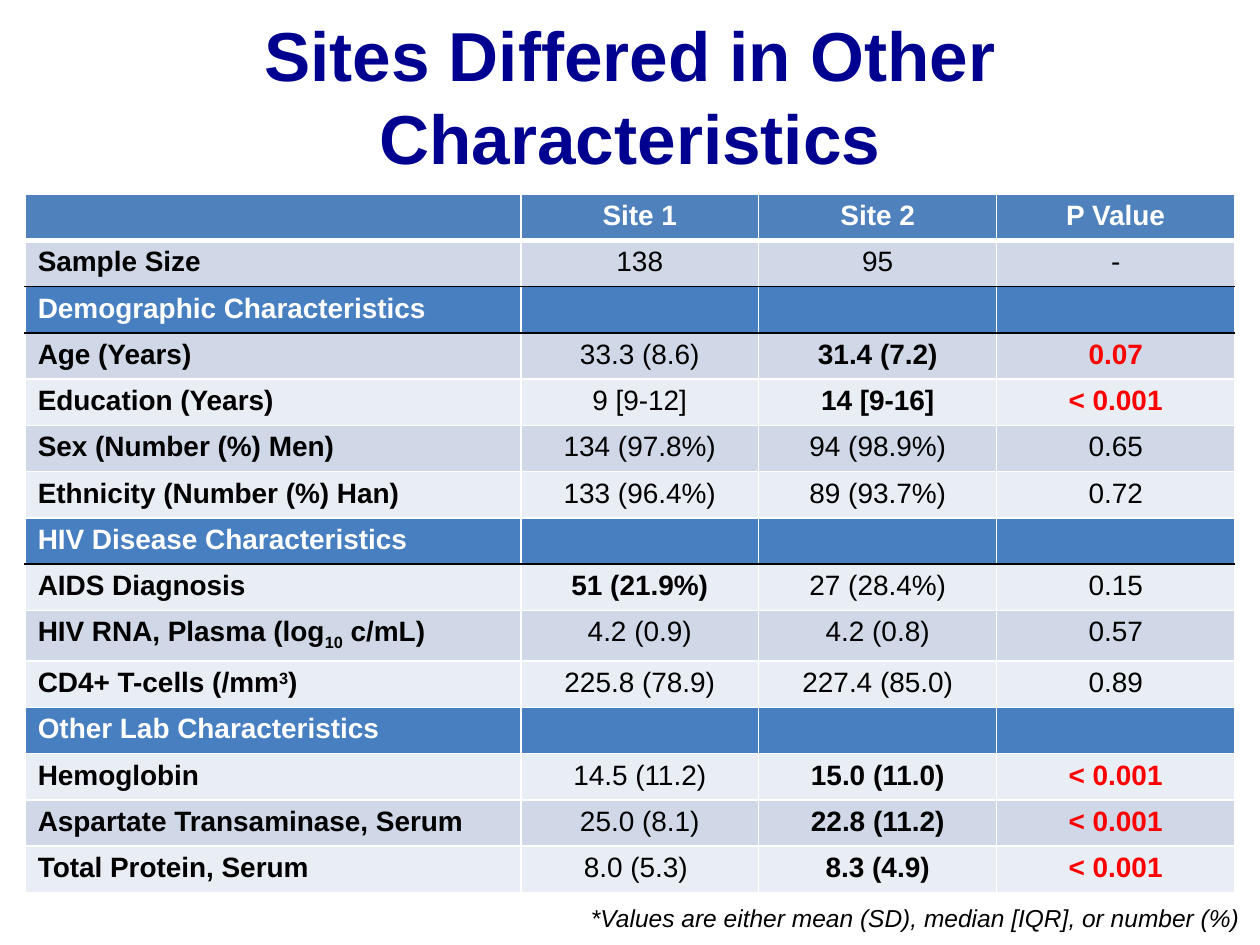
"""Build a slide with a table comparing the characteristics of two study sites."""
import lxml.etree
import pptx
import pptx.dml.color
import pptx.enum.text
import pptx.oxml.ns
import pptx.util

Pt = pptx.util.Pt
RGBColor = pptx.dml.color.RGBColor
PP_ALIGN = pptx.enum.text.PP_ALIGN
qn = pptx.oxml.ns.qn

NAVY = RGBColor(0x00, 0x00, 0x90)
HEADER_BLUE = RGBColor(0x4F, 0x81, 0xBD)
SECTION_BLUE = RGBColor(0x47, 0x7F, 0xC1)
BAND_DARK = RGBColor(0xD0, 0xD8, 0xE8)
BAND_LIGHT = RGBColor(0xE9, 0xED, 0xF4)
WHITE = RGBColor(0xFF, 0xFF, 0xFF)
BLACK = RGBColor(0x00, 0x00, 0x00)
RED = RGBColor(0xFF, 0x00, 0x00)

ROWS = [
    ("", "Site 1", "Site 2", "P Value"),
    ("Sample Size", "138", "95", "-"),
    ("Demographic Characteristics", "", "", ""),
    ("Age (Years)", "33.3 (8.6)", "31.4 (7.2)", "0.07"),
    ("Education (Years)", "9 [9-12]", "14 [9-16]", "< 0.001"),
    ("Sex (Number (%) Men)", "134 (97.8%)", "94 (98.9%)", "0.65"),
    ("Ethnicity (Number (%) Han)", "133 (96.4%)", "89 (93.7%)", "0.72"),
    ("HIV Disease Characteristics", "", "", ""),
    ("AIDS Diagnosis", "51 (21.9%)", "27 (28.4%)", "0.15"),
    ("HIV RNA, Plasma (log|10| c/mL)", "4.2 (0.9)", "4.2 (0.8)", "0.57"),
    ("CD4+ T-cells (/mm|3|)", "225.8 (78.9)", "227.4 (85.0)", "0.89"),
    ("Other Lab Characteristics", "", "", ""),
    ("Hemoglobin", "14.5 (11.2)", "15.0 (11.0)", "< 0.001"),
    ("Aspartate Transaminase, Serum", "25.0 (8.1)", "22.8 (11.2)", "< 0.001"),
    ("Total Protein, Serum", "8.0 (5.3) ", "8.3 (4.9)", "< 0.001"),
]
SECTION_ROWS = (2, 7, 11)
BLACK_RULES_BELOW = (1, 2, 7)
RED_VALUES = ("0.07", "< 0.001")
BOLD_VALUES = ("51 (21.9%)",)
BASELINES = {"10": "-25000", "3": "30000"}


def style_run(r, size, color, bold=False, italic=False):
    r.font.name = "Arial"
    r.font.size = Pt(size)
    r.font.bold = bold
    r.font.italic = italic
    r.font.color.rgb = color


def add_border(cell, side, color, width):
    ln = lxml.etree.SubElement(cell._tc.get_or_add_tcPr(), qn("a:ln" + side), w=str(Pt(width)))
    fill = lxml.etree.SubElement(ln, qn("a:solidFill"))
    lxml.etree.SubElement(fill, qn("a:srgbClr"), val=str(color))


prs = pptx.Presentation()
prs.slide_width, prs.slide_height = Pt(720), Pt(540)
s = prs.slides.add_slide(prs.slide_layouts[6])

title = s.shapes.add_textbox(Pt(18), Pt(9.36), Pt(684), Pt(90))
tf = title.text_frame
tf.word_wrap = True
tf.vertical_anchor = pptx.enum.text.MSO_ANCHOR.MIDDLE
tf.text = "Sites Differed in Other Characteristics"
tf.paragraphs[0].alignment = PP_ALIGN.CENTER
style_run(tf.paragraphs[0].runs[0], 39.6, NAVY, bold=True)

table = s.shapes.add_table(len(ROWS), 4, Pt(14.4), Pt(111), Pt(691.2), Pt(396)).table
for column, width in zip(table.columns, (283.2, 136, 136, 136)):
    column.width = Pt(width)

for i, values in enumerate(ROWS):
    table.rows[i].height = Pt(26.4)
    is_banner = i == 0 or i in SECTION_ROWS
    if i == 0:
        row_fill = HEADER_BLUE
    elif is_banner:
        row_fill = SECTION_BLUE
    else:
        row_fill = BAND_DARK if i % 2 else BAND_LIGHT
    for j, value in enumerate(values):
        cell = table.cell(i, j)
        add_border(cell, "L", WHITE, 1)
        add_border(cell, "R", WHITE, 1)
        add_border(cell, "T", BLACK if i - 1 in BLACK_RULES_BELOW else WHITE, 3 if i == 1 else 1)
        add_border(cell, "B", BLACK if i in BLACK_RULES_BELOW else WHITE, 3 if i == 0 else 1)
        cell.fill.solid()
        cell.fill.fore_color.rgb = row_fill

        p = cell.text_frame.paragraphs[0]
        p.alignment = PP_ALIGN.CENTER if j else PP_ALIGN.LEFT
        if not value:
            lxml.etree.SubElement(p._p, qn("a:endParaRPr"), sz="1600")
            continue
        is_red = j == 3 and value in RED_VALUES
        is_bold = (is_banner or j == 0 or is_red or value in BOLD_VALUES
                   or (j == 2 and values[3] in RED_VALUES))
        color = WHITE if is_banner else RED if is_red else BLACK
        for part in value.split("|"):
            r = p.add_run()
            r.text = part
            style_run(r, 16, color, bold=is_bold)
            if j == 0 and part in BASELINES:
                r.font._element.set("baseline", BASELINES[part])

footnote = s.shapes.add_textbox(Pt(324), Pt(512.64), Pt(391.68), Pt(24.48))
tf = footnote.text_frame
tf.word_wrap = False
tf.auto_size = pptx.enum.text.MSO_AUTO_SIZE.SHAPE_TO_FIT_TEXT
tf.text = "*Values are either mean (SD), median [IQR], or number (%)"
tf.paragraphs[0].alignment = PP_ALIGN.RIGHT
style_run(tf.paragraphs[0].runs[0], 14, BLACK, italic=True)

prs.save("out.pptx")
